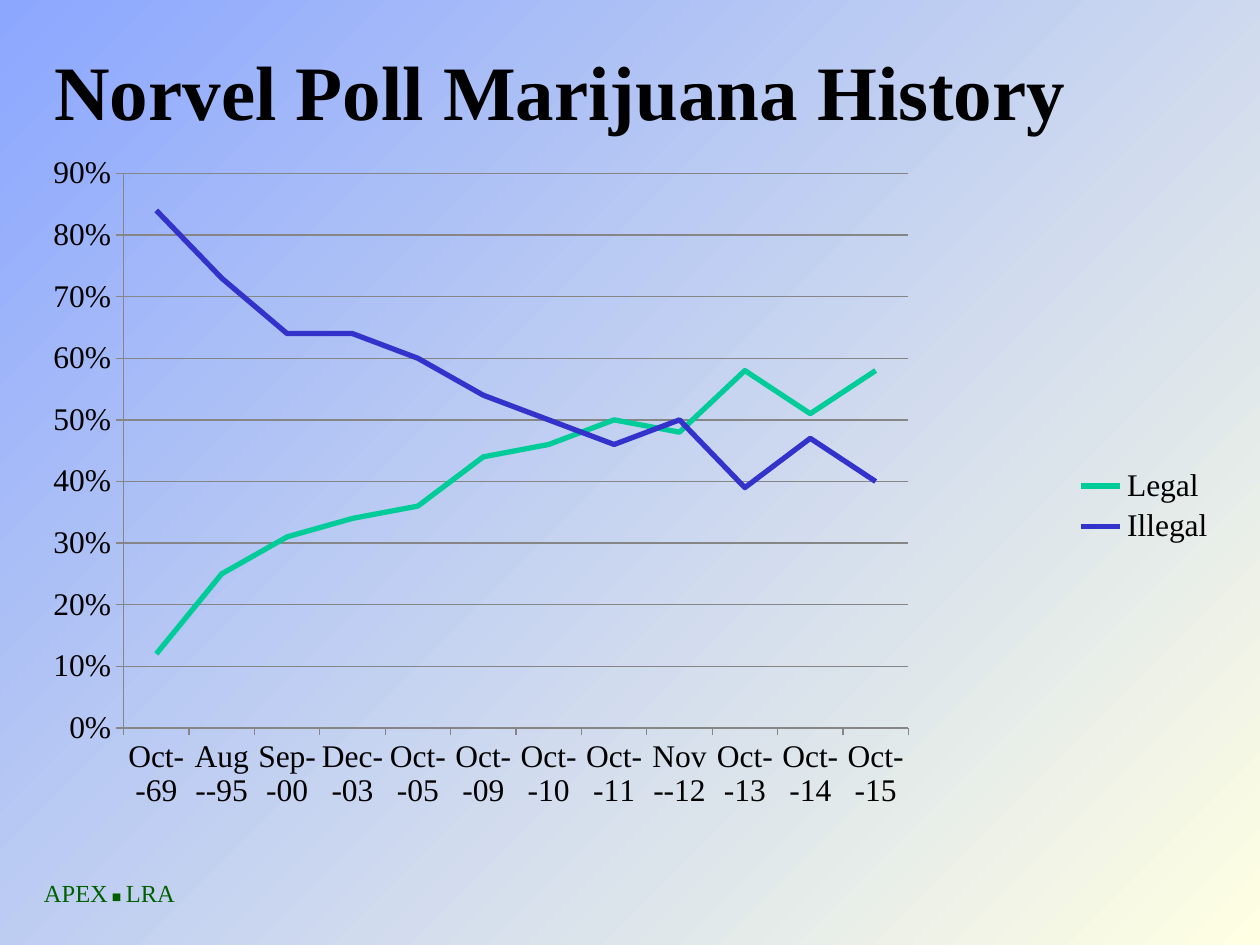
from lxml.etree import SubElement, Element
from pptx import Presentation
from pptx.chart.data import CategoryChartData
from pptx.dml.color import RGBColor
from pptx.enum.chart import XL_CHART_TYPE as ChartType, XL_LEGEND_POSITION as LegendSide
from pptx.enum.chart import XL_MARKER_STYLE as Marker, XL_TICK_MARK as Tick
from pptx.oxml.ns import qn
from pptx.util import Pt

SERIF = "Times New Roman"
BLACK, GREEN, GRAY = "000000", "006000", "868686"
BACKGROUND = ["8CA7FE", "FFFFE3"]

TITLE = [("Norvel Poll Marijuana History", dict(name=SERIF, size=Pt(44), bold=True), BLACK)]
FOOTER = [
    ("APEX", dict(name=SERIF, size=Pt(14)), GREEN),
    (" ", dict(name=SERIF, size=Pt(9)), GREEN),
    ("■ ", dict(name="Arial", size=Pt(9)), GREEN),
    ("LRA", dict(name=SERIF, size=Pt(14)), GREEN),
]
DATES = ["Oct--69", "Aug--95", "Sep--00", "Dec--03", "Oct--05", "Oct--09",
         "Oct--10", "Oct--11", "Nov--12", "Oct--13", "Oct--14", "Oct--15"]
SERIES = [
    ("Legal", "00CC99", [0.12, 0.25, 0.31, 0.34, 0.36, 0.44, 0.46, 0.5, 0.48, 0.58, 0.51, 0.58]),
    ("Illegal", "3333CC", [0.84, 0.73, 0.64, 0.64, 0.6, 0.54, 0.5, 0.46, 0.5, 0.39, 0.47, 0.4]),
]
PLOT = dict(layoutTarget="inner", xMode="edge", yMode="edge", x=0.085, y=0.05, w=0.65, h=0.75)


def rgb(value):
    return RGBColor.from_string(value)


def apply(target, values):
    for name, value in values.items():
        setattr(target, name, value)


def add_text(page, place, spans, before=0):
    box = page.shapes.add_textbox(*map(Pt, place))
    box.text_frame.word_wrap = True
    para = box.text_frame.paragraphs[0]
    para.space_before = Pt(before)
    for text, values, color in spans:
        span = para.add_run()
        span.text = text
        apply(span.font, values)
        span.font.color.rgb = rgb(color)


def style_line(line, color, width):
    line.color.rgb = rgb(color)
    line.width = Pt(width)


def place_plot(chart):
    area = chart.element.find(".//" + qn("c:plotArea"))
    for old in area.findall(qn("c:layout")):
        area.remove(old)
    layout = Element(qn("c:layout"))
    area.insert(0, layout)
    manual = SubElement(layout, qn("c:manualLayout"))
    for name, value in PLOT.items():
        SubElement(manual, qn("c:" + name)).set("val", str(value))


def add_history(page, place):
    data = CategoryChartData(number_format="0%")
    data.categories = DATES
    for name, _, values in SERIES:
        data.add_series(name, values)
    chart = page.shapes.add_chart(ChartType.LINE, *map(Pt, place), data).chart
    apply(chart, dict(has_title=False, has_legend=True))
    apply(chart.font, dict(name=SERIF, size=Pt(18)))
    chart.font.color.rgb = rgb(BLACK)
    apply(chart.legend, dict(position=LegendSide.RIGHT, include_in_layout=False))
    chart.plots[0].vary_by_categories = False

    for axis in (chart.category_axis, chart.value_axis):
        apply(axis, dict(major_tick_mark=Tick.OUTSIDE, minor_tick_mark=Tick.NONE))
        style_line(axis.format.line, GRAY, 0.75)
    apply(chart.value_axis, dict(minimum_scale=0, maximum_scale=0.9, major_unit=0.1,
                                 has_major_gridlines=True))
    apply(chart.value_axis.tick_labels, dict(number_format="0%", number_format_is_linked=False))
    style_line(chart.value_axis.major_gridlines.format.line, GRAY, 0.75)

    for series, (_, color, _) in zip(chart.plots[0].series, SERIES):
        series.smooth = False
        series.marker.style = Marker.NONE
        style_line(series.format.line, color, 3)
    place_plot(chart)


def main():
    deck = Presentation()
    apply(deck, dict(slide_width=Pt(720), slide_height=Pt(540)))
    page = deck.slides.add_slide(deck.slide_layouts[6])
    fill = page.background.fill
    fill.gradient()
    fill.gradient_angle = 315
    for stop, color in zip(fill.gradient_stops, BACKGROUND):
        stop.color.rgb = rgb(color)
    add_text(page, (18, 498, 120, 18), FOOTER)
    add_text(page, (24, 21.6, 678, 90), TITLE, before=8)
    add_history(page, (12, 78, 690, 422.5))
    deck.save("out.pptx")


if __name__ == "__main__":
    main()
